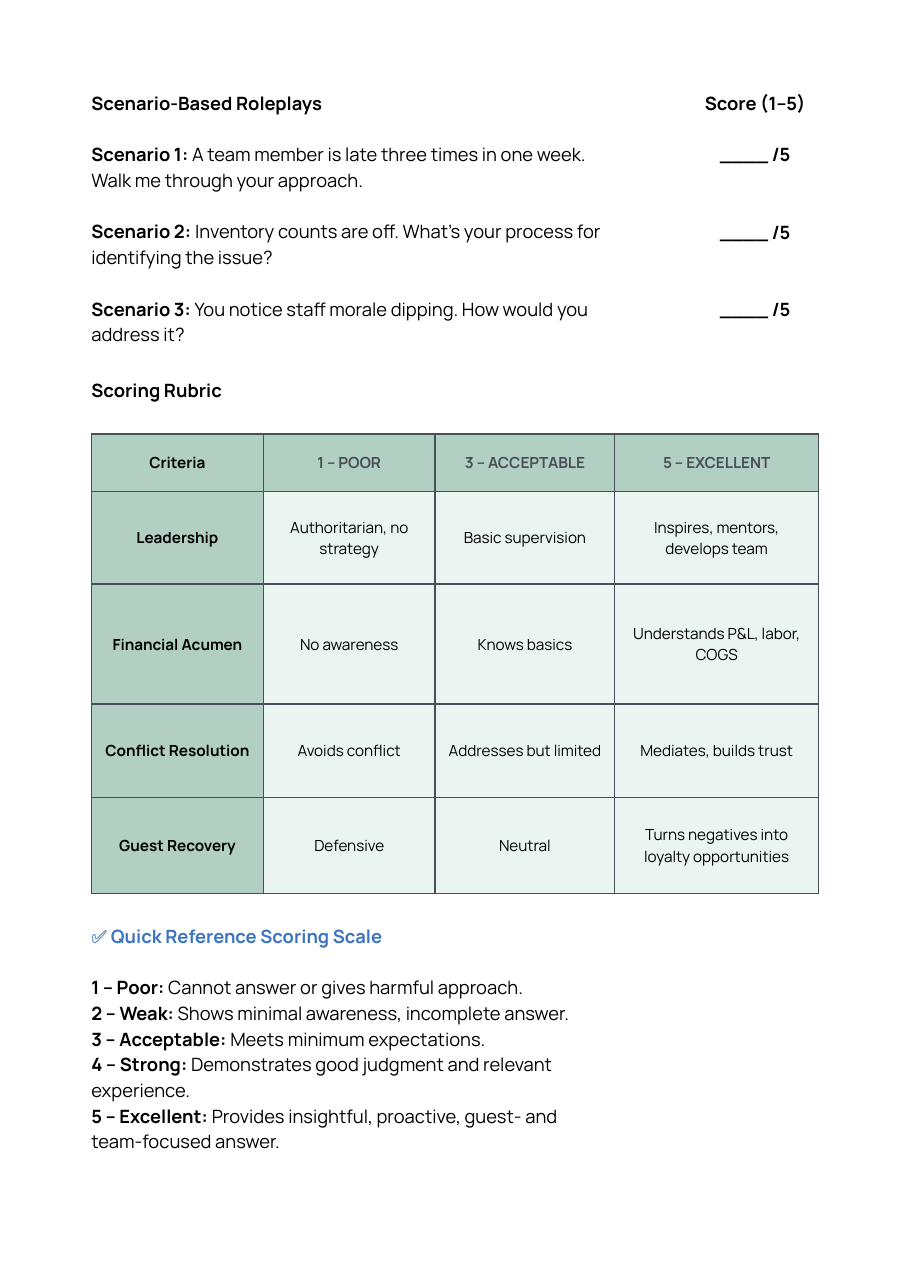
from dataclasses import dataclass
from lxml import etree
from pptx import Presentation
from pptx.dml.color import RGBColor
from pptx.enum import text
from pptx.oxml import ns
from pptx.util import Inches, Pt


@dataclass(frozen=True)
class Theme:
    font: str = "Manrope"
    ink: str = "000000"
    slate: str = "494F56"
    blue: str = "3B75C2"
    sage: str = "B2CFC4"
    mint: str = "EAF4F0"
    body: float = 12
    cell: float = 10
    leading: float = 1.4
    border: float = 1.03


theme = Theme()
line = theme.body * theme.leading
left, top, width, column = 0.83, 0.8, 6.61, 4.64
heading_height, heading_step = 0.23, 0.47


def write(frame, lines, size=theme.body, color=theme.ink, align=text.PP_ALIGN.LEFT, gap=0, inset=0):
    frame.word_wrap = True
    frame.margin_left = frame.margin_right = Inches(inset)
    frame.margin_top = frame.margin_bottom = Inches(inset)
    frame.text = "\n".join(label for label, detail in lines)
    for index, (paragraph, (label, detail)) in enumerate(zip(frame.paragraphs, lines)):
        paragraph.alignment = align
        paragraph.line_spacing = Pt(size * theme.leading)
        paragraph.space_before = Pt(gap if index else 0)
        paragraph.space_after = Pt(0)
        properties = paragraph._p.get_or_add_pPr()
        properties.set("marL", "0")
        properties.set("indent", "0")
        etree.SubElement(properties, ns.qn("a:buNone"))
        if detail:
            paragraph.add_run().text = detail
        for run in paragraph.runs:
            run.font.name = theme.font
            run.font.size = Pt(size)
            run.font.bold = run.text == label
            run.font.color.rgb = RGBColor.from_string(color)


def place(shape, x, y, w, h):
    shape.left, shape.top, shape.width, shape.height = map(Inches, (x, y, w, h))
    shape.text_frame.auto_size = text.MSO_AUTO_SIZE.NONE
    shape.text_frame.vertical_anchor = text.MSO_ANCHOR.TOP
    return shape.text_frame


deck = Presentation()
deck.slide_width, deck.slide_height = Inches(8.26), Inches(11.69)
slide = deck.slides.add_slide(deck.slide_layouts[3])
roleplays_title, scenarios, scale = slide.placeholders

write(place(roleplays_title, left, top, column, heading_height), [("Scenario-Based Roleplays", "")])
write(place(scenarios, left, top + heading_step, column, 2.05), [
    ("Scenario 1:", " A team member is late three times in one week. Walk me through your approach."),
    ("Scenario 2: ", "Inventory counts are off. What’s your process for identifying the issue?"),
    ("Scenario 3:", " You notice staff morale dipping. How would you address it?"),
], gap=line)

score_heading = slide.shapes.add_textbox(0, 0, 0, 0)
write(place(score_heading, 6.27, top, 1.17, heading_height), [("Score (1–5)", "")],
      align=text.PP_ALIGN.CENTER)
scores = slide.shapes.add_textbox(0, 0, 0, 0)
write(place(scores, 6.27, top + heading_step, 1.17, 2.05), [("____ /5", "")] * 3,
      align=text.PP_ALIGN.CENTER, gap=2 * line)

rubric_heading = slide.shapes.add_textbox(0, 0, 0, 0)
write(place(rubric_heading, left, 3.41, width, heading_height), [("Scoring Rubric", "")])

criteria = [
    ("Criteria", "1 – POOR", "3 – ACCEPTABLE", "5 – EXCELLENT"),
    ("Leadership", "Authoritarian, no strategy", "Basic supervision", "Inspires, mentors, develops team"),
    ("Financial Acumen", "No awareness", "Knows basics", "Understands P&L, labor, COGS"),
    ("Conflict Resolution", "Avoids conflict", "Addresses but limited", "Mediates, builds trust"),
    ("Guest Recovery", "Defensive", "Neutral", "Turns negatives into loyalty opportunities"),
]
rubric = slide.shapes.add_table(5, 4, Inches(left), Inches(3.94), Inches(width), Inches(4.17)).table
rubric.horz_banding = False
for rubric_column, column_width in zip(rubric.columns, (1.56, 1.56, 1.63, 1.85)):
    rubric_column.width = Inches(column_width)
for rubric_row, row_height in zip(rubric.rows, (0.52, 0.84, 1.09, 0.85, 0.87)):
    rubric_row.height = Inches(row_height)

for r, ratings in enumerate(criteria):
    for c, wording in enumerate(ratings):
        cell = rubric.cell(r, c)
        is_header = r == 0 or c == 0
        write(cell.text_frame, [(wording, "") if is_header else ("", wording)], size=theme.cell,
              color=theme.slate if r == 0 and c else theme.ink,
              align=text.PP_ALIGN.CENTER, inset=0.09)
        cell.margin_left = cell.margin_right = cell.margin_top = cell.margin_bottom = Inches(0.09)
        cell.vertical_anchor = text.MSO_ANCHOR.MIDDLE
        for side in ("a:lnL", "a:lnR", "a:lnT", "a:lnB"):
            border = etree.SubElement(cell._tc.get_or_add_tcPr(), ns.qn(side), w=str(Pt(theme.border)))
            paint = etree.SubElement(border, ns.qn("a:solidFill"))
            etree.SubElement(paint, ns.qn("a:srgbClr"), val=theme.slate)
        cell.fill.solid()
        cell.fill.fore_color.rgb = RGBColor.from_string(theme.sage if is_header else theme.mint)

scale_heading = slide.shapes.add_textbox(0, 0, 0, 0)
write(place(scale_heading, left, 8.36, column, heading_height),
      [("✅ Quick Reference Scoring Scale", "")], color=theme.blue)
write(place(scale, left, 8.36 + heading_step, column, 1.82), [
    ("1 – Poor:", " Cannot answer or gives harmful approach."),
    ("2 – Weak: ", "Shows minimal awareness, incomplete answer."),
    ("3 – Acceptable:", " Meets minimum expectations."),
    ("4 – Strong: ", "Demonstrates good judgment and relevant experience."),
    ("5 – Excellent: ", "Provides insightful, proactive, guest- and team-focused answer."),
])

deck.save("out.pptx")
